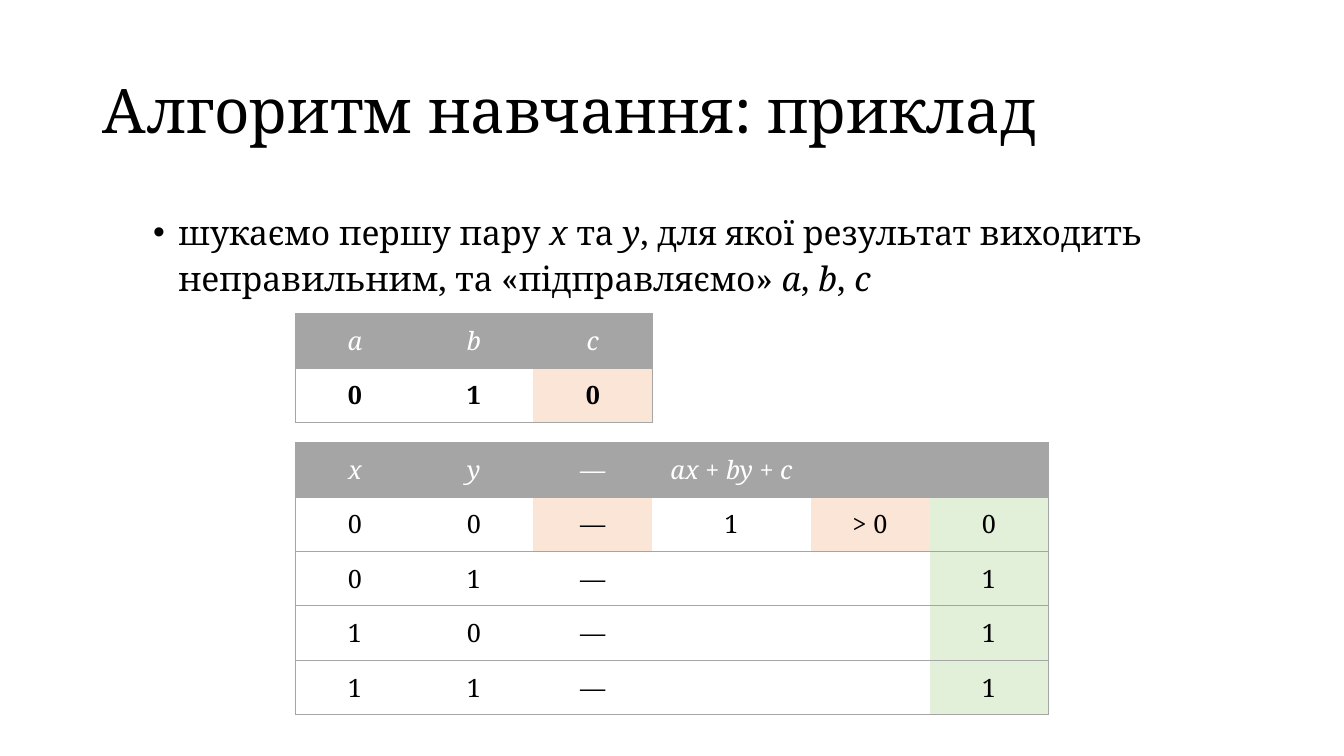
from lxml.etree import SubElement
from pptx import Presentation
from pptx.dml.color import RGBColor
from pptx.enum.text import MSO_ANCHOR, PP_ALIGN
from pptx.oxml.ns import qn
from pptx.util import Inches, Pt

COLORS = {"text": "000000", "header_text": "FFFFFF", "grey": "A5A5A5",
          "peach": "FBE5D6", "green": "E2F0D9"}
FONT = "Noto Serif"
NO_STYLE = "{2D5ABB26-0587-4C30-8999-92F81FD0307C}"
ROW_HEIGHT = 0.54
NARROW, WIDE = 1.18, 1.57

WEIGHTS = [["*a*", "*b*", "*c*"], ["0", "1", "0"]]
WEIGHT_FILLS = {(1, 2): "peach"}
SAMPLES = [
    ["*x*", "*y*", "*—*", "*ax* + *by* + *c*", "", ""],
    ["0", "0", "—", "1", "> 0", "0"],
    ["0", "1", "—", "", "", "1"],
    ["1", "0", "—", "", "", "1"],
    ["1", "1", "—", "", "", "1"],
]
SAMPLE_FILLS = {(1, 2): "peach", (1, 4): "peach",
                **{(row, 5): "green" for row in range(1, 5)}}


def write(paragraph, marked, size, color="text", bold=False):
    """Write text whose parts between asterisks are italic."""
    font = paragraph.font
    font.name, font.size, font.bold = FONT, Pt(size), bold
    font.color.rgb = RGBColor.from_string(COLORS[color])
    for index, part in enumerate(marked.split("*")):
        if part:
            run = paragraph.add_run()
            run.text = part
            run.font.italic = index % 2 == 1


def add_title(slide, left, top, width, height):
    """Place and format the slide title."""
    title = slide.shapes.title
    title.left, title.top = Inches(left), Inches(top)
    title.width, title.height = Inches(width), Inches(height)
    title.text_frame.vertical_anchor = MSO_ANCHOR.MIDDLE
    heading = title.text_frame.paragraphs[0]
    heading.alignment = PP_ALIGN.LEFT
    heading.line_spacing = 0.9
    write(heading, "Алгоритм навчання: приклад", 44)


def add_step(slide, left, top, width, height):
    """Add the bulleted description of the step."""
    box = slide.shapes.add_textbox(Inches(left), Inches(top), Inches(width), Inches(height))
    box.text_frame.word_wrap = True
    step = box.text_frame.paragraphs[0]
    step.line_spacing = 1.14
    step.space_before, step.space_after = Pt(5), Pt(15)
    write(step, "шукаємо першу пару *x* та *y*, для якої результат виходить "
                "неправильним, та «підправляємо» *a*, *b*, *c*", 24)
    properties = step._p.get_or_add_pPr()
    properties.set("marL", str(Inches(0.75)))
    properties.set("indent", str(Inches(-0.25)))
    bullet_font = properties.makeelement(qn("a:buFont"), {"typeface": "Arial"})
    bullet = properties.makeelement(qn("a:buChar"), {"char": "•"})
    default_font = properties.find(qn("a:defRPr"))
    default_font.addprevious(bullet_font)
    default_font.addprevious(bullet)


def add_borders(cell, sides):
    """Draw thin grey lines on the given sides and none on the others."""
    properties = cell._tc.get_or_add_tcPr()
    for index, side in enumerate("LRTB"):
        line = properties.makeelement(qn(f"a:ln{side}"), {"w": str(Pt(0.5))})
        if side in sides:
            fill = SubElement(line, qn("a:solidFill"))
            SubElement(fill, qn("a:srgbClr"), val=COLORS["grey"])
        else:
            SubElement(line, qn("a:noFill"))
        properties.insert(index, line)


def add_grid(slide, left, top, widths, rows, fills, bold=False):
    """Add a table with a grey header, ruled rows and highlighted cells."""
    frame = slide.shapes.add_table(len(rows), len(widths), Inches(left), Inches(top),
                                   Inches(sum(widths)), Inches(ROW_HEIGHT * len(rows)))
    table = frame.table
    table.first_row = table.horz_banding = False
    table._tbl.tblPr.find(qn("a:tableStyleId")).text = NO_STYLE
    for column, width in zip(table.columns, widths):
        column.width = Inches(width)
    for r, values in enumerate(rows):
        table.rows[r].height = Inches(ROW_HEIGHT)
        for c, value in enumerate(values):
            cell = table.cell(r, c)
            cell.margin_left = cell.margin_right = Inches(0.1)
            cell.margin_top = cell.margin_bottom = Inches(0.1)
            highlight = "grey" if r == 0 else fills.get((r, c))
            if highlight:
                cell.fill.solid()
                cell.fill.fore_color.rgb = RGBColor.from_string(COLORS[highlight])
            else:
                cell.fill.background()
            sides = "TB" + ("L" if c == 0 else "") + ("R" if c == len(widths) - 1 else "")
            add_borders(cell, sides)
            entry = cell.text_frame.paragraphs[0]
            entry.alignment = PP_ALIGN.CENTER
            write(entry, value, 18, "text" if r else "header_text", bold and r > 0)


def main():
    """Build the slide and save it."""
    presentation = Presentation()
    presentation.slide_width, presentation.slide_height = Inches(13.33), Inches(7.5)
    slide = presentation.slides.add_slide(presentation.slide_layouts[5])
    add_title(slide, 0.92, 0.4, 11.5, 1.45)
    add_step(slide, 0.92, 2, 11.5, 1.1)
    add_grid(slide, 2.93, 4.39, [NARROW] * 3 + [WIDE] + [NARROW] * 2, SAMPLES, SAMPLE_FILLS)
    add_grid(slide, 2.93, 3.11, [NARROW] * 3, WEIGHTS, WEIGHT_FILLS, bold=True)
    presentation.save("out.pptx")


if __name__ == "__main__":
    main()
